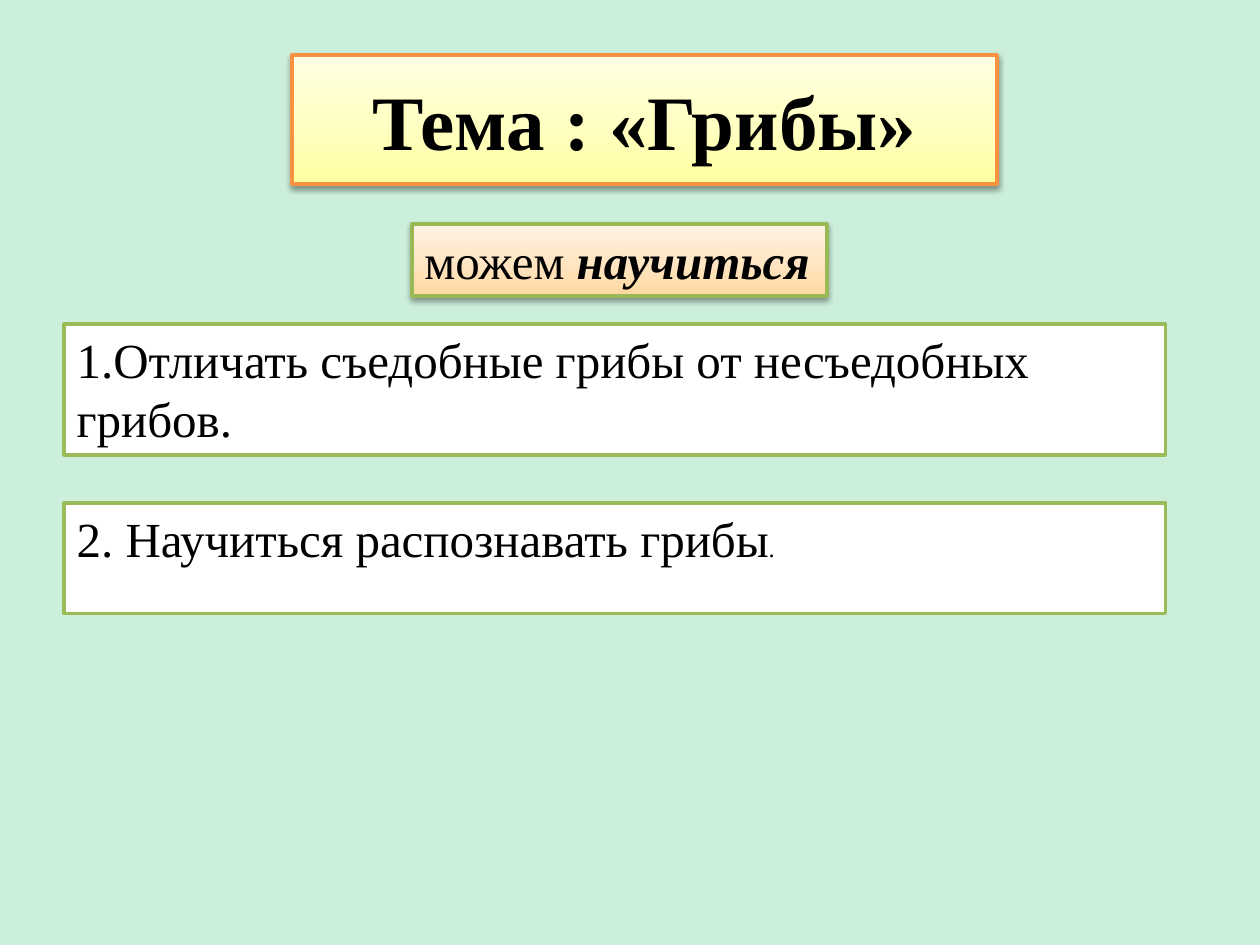
from typing import NamedTuple

from lxml import etree
from pptx import Presentation
from pptx import util as u
from pptx.dml.color import RGBColor
from pptx.enum import shapes, text
from pptx.oxml.ns import qn

COLS, ROWS = 100, 75
WIDE, HIGH = u.Inches(10), u.Inches(7.5)
FONT = "Times New Roman"


class Run(NamedTuple):
    words: str
    size: float = 28
    bold: bool = False
    slant: bool = False


class Box(NamedTuple):
    col: float
    row: float
    cols: float
    rows: float
    fills: tuple[str, ...]
    edge: str
    width: float
    runs: tuple[Run, ...]
    title: bool = False
    wrap: bool = True


def tint(code: str) -> RGBColor:
    """Turn a hex string into a colour."""
    return RGBColor.from_string(code)


def blend(shape, fills: tuple[str, ...]) -> None:
    """Fill a shape with evenly spaced stops from bottom to top."""
    shape.fill.gradient()
    shape.fill.gradient_angle = 90
    stops = shape._element.spPr.find(".//" + qn("a:gsLst"))
    for old in list(stops):
        stops.remove(old)
    for i, code in enumerate(fills):
        place = str(100000 * i // (len(fills) - 1))
        stop = etree.SubElement(stops, qn("a:gs"), pos=place)
        etree.SubElement(stop, qn("a:srgbClr"), val=code)


def shade(shape) -> None:
    """Give a shape a soft shadow below it."""
    effects = shape._element.spPr.find(qn("a:effectLst"))
    outer = etree.SubElement(
        effects, qn("a:outerShdw"), blurRad=str(u.Pt(3.1)),
        dist=str(u.Pt(1.6)), dir="5400000", rotWithShape="0")
    black = etree.SubElement(outer, qn("a:srgbClr"), val="000000")
    etree.SubElement(black, qn("a:alpha"), val="38000")


def write(shape, box: Box) -> None:
    """Write the runs of a box into its shape."""
    frame = shape.text_frame
    frame.word_wrap = box.wrap
    anchor, align = text.MSO_ANCHOR, text.PP_ALIGN
    frame.vertical_anchor = anchor.MIDDLE if box.title else anchor.TOP
    para = frame.paragraphs[0]
    para.alignment = align.CENTER if box.title else align.LEFT
    for item in box.runs:
        run = para.add_run()
        run.text = item.words
        font = run.font
        font.name, font.size = FONT, u.Pt(item.size)
        font.bold, font.italic = item.bold, item.slant
        font.color.rgb = tint("000000")


def draw(slide, box: Box) -> None:
    """Draw one framed box with its text."""
    dx, dy = WIDE / COLS, HIGH / ROWS
    shape = slide.shapes.add_shape(
        shapes.MSO_SHAPE.RECTANGLE, round(box.col * dx), round(box.row * dy),
        round(box.cols * dx), round(box.rows * dy))
    shape.line.color.rgb = tint(box.edge)
    shape.line.width = u.Pt(box.width)
    shape.shadow.inherit = False
    if len(box.fills) > 1:
        blend(shape, box.fills)
        shade(shape)
    else:
        shape.fill.solid()
        shape.fill.fore_color.rgb = tint(box.fills[0])
    write(shape, box)


def goal(row: float, rows: float, *runs: Run) -> Box:
    """Describe a white box for one learning goal."""
    return Box(5.1, row, 87.4, rows, ("FFFFFF",), "9BBB59", 2, runs)


BOXES = (
    Box(23.2, 4.4, 55.9, 10.2, ("FFFFA0", "FFFFC5", "FFFFE3"), "F69240", 2.25,
        (Run("Тема : «Грибы»", 44, True),), title=True),
    Box(32.7, 17.8, 32.9, 5.7, ("FFD8A0", "FFE6C5", "FFF2E3"), "98B955", 2.25,
        (Run("можем "), Run("научиться", bold=True, slant=True)), wrap=False),
    goal(25.7, 10.4,
         Run("1.Отличать съедобные грибы от несъедобных грибов.")),
    goal(39.9, 8.8, Run("2. Научиться распознавать грибы"), Run(".", 14)),
)


def main() -> None:
    """Build the slide and save it."""
    deck = Presentation()
    deck.slide_width, deck.slide_height = WIDE, HIGH
    slide = deck.slides.add_slide(deck.slide_layouts[6])
    back = slide.background.fill
    back.solid()
    back.fore_color.rgb = tint("CCEFDC")
    for box in BOXES:
        draw(slide, box)
    deck.save("out.pptx")


if __name__ == "__main__":
    main()
